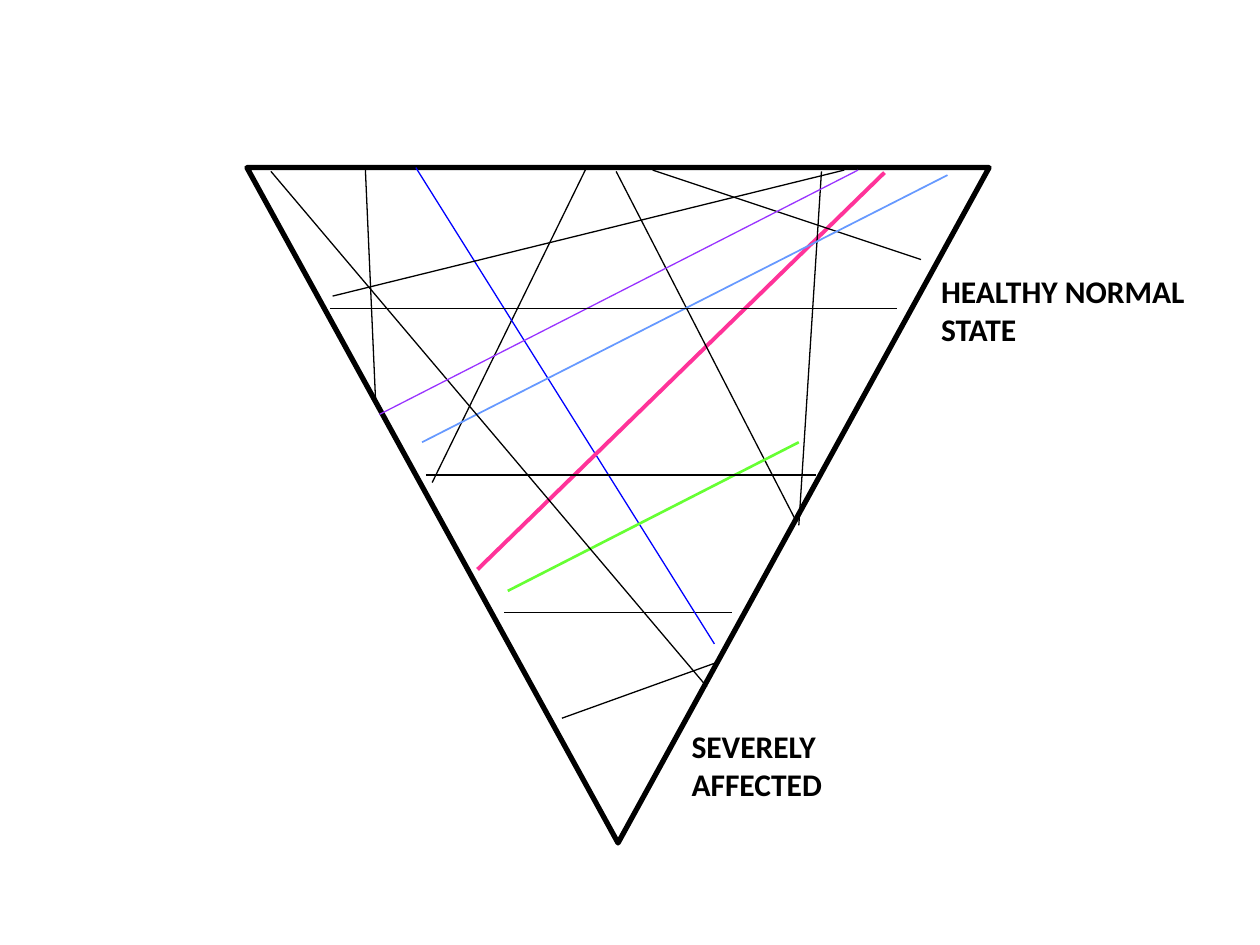
from lxml import etree
from pptx import Presentation
from pptx.dml.color import RGBColor
from pptx.enum import shapes, text
from pptx.oxml import ns
from pptx.util import Inches, Pt

BLACK = RGBColor(0x00, 0x00, 0x00)
BLUE = RGBColor(0x00, 0x00, 0xFF)
PINK = RGBColor(0xFF, 0x33, 0x99)
SKY = RGBColor(0x66, 0x99, 0xFF)
GREEN = RGBColor(0x66, 0xFF, 0x33)
PURPLE = RGBColor(0x99, 0x33, 0xFF)

TRIANGLE_BOX = (1.96, 1.33, 5.89, 5.36)
LABELS = [
    ("HEALTHY NORMAL STATE", (7.37, 2.11, 2.25, 0.7)),
    ("SEVERELY AFFECTED", (5.39, 5.72, 2.17, 0.7)),
]
LABEL_FORMAT = {"name": "Calibri", "size": Pt(18), "bold": True}

# Start and end points are measured from the triangle's top left corner.
STRANDS = [
    ((2.04, 3.53), (3.85, 3.53), BLACK, 0.75),
    ((2.69, 0.01), (1.47, 2.5), BLACK, 0.75),
    ((1.34, 0), (3.71, 3.78), BLUE, 0.75),
    ((5.06, 0.04), (1.83, 3.19), PINK, 2.25),
    ((2.93, 0.03), (4.35, 2.79), BLACK, 0.75),
    ((4.74, 0.02), (0.68, 1.02), BLACK, 0.75),
    ((0.94, 0.02), (1.02, 1.83), BLACK, 0.75),
    ((4.56, 0.03), (4.38, 2.84), BLACK, 0.75),
    ((3.22, 0.02), (5.35, 0.73), BLACK, 0.75),
    ((1.39, 2.18), (5.56, 0.06), SKY, 1),
    ((2.07, 3.36), (4.38, 2.18), GREEN, 1.5),
    ((0.19, 0.03), (3.65, 4.12), BLACK, 0.75),
    ((2.5, 4.37), (3.75, 3.92), BLACK, 0.75),
    ((1.05, 1.96), (4.85, 0.02), PURPLE, 0.75),
    ((0.66, 1.12), (5.16, 1.12), BLACK, 0.75),
    ((1.42, 2.44), (4.52, 2.44), BLACK, 0.75),
]


def add_triangle(page, box):
    """Draw the downward triangle outline filling the box."""
    triangle = page.shapes.add_shape(
        shapes.MSO_SHAPE.ISOSCELES_TRIANGLE, *map(Inches, box))
    triangle.rotation = 180
    triangle.shadow.inherit = False
    triangle.fill.background()
    triangle.line.color.rgb = BLACK
    triangle.line.width = Pt(3)


def add_strands(page, box):
    """Draw the strands crossing the triangle in the box."""
    left, top = box[:2]
    for start, end, color, width in STRANDS:
        points = [Inches(value) for x, y in (start, end)
                  for value in (left + x, top + y)]
        strand = page.shapes.add_connector(shapes.MSO_CONNECTOR.STRAIGHT, *points)
        strand.line.color.rgb = color
        strand.line.width = Pt(width)
        etree.SubElement(strand.element.spPr, ns.qn("a:effectLst"))


def add_label(page, wording, box):
    """Place one bold label in the box."""
    label = page.shapes.add_textbox(*map(Inches, box))
    frame = label.text_frame
    frame.word_wrap = True
    frame.auto_size = text.MSO_AUTO_SIZE.SHAPE_TO_FIT_TEXT
    span = frame.paragraphs[0].add_run()
    span.text = wording
    for name, value in LABEL_FORMAT.items():
        setattr(span.font, name, value)
    span.font.color.rgb = BLACK


def main():
    """Build and save the one-slide deck."""
    deck = Presentation()
    deck.slide_width, deck.slide_height = Inches(10), Inches(7.5)
    page = deck.slides.add_slide(deck.slide_layouts[6])
    add_triangle(page, TRIANGLE_BOX)
    for wording, box in LABELS:
        add_label(page, wording, box)
    add_strands(page, TRIANGLE_BOX)
    deck.save("out.pptx")


if __name__ == "__main__":
    main()
